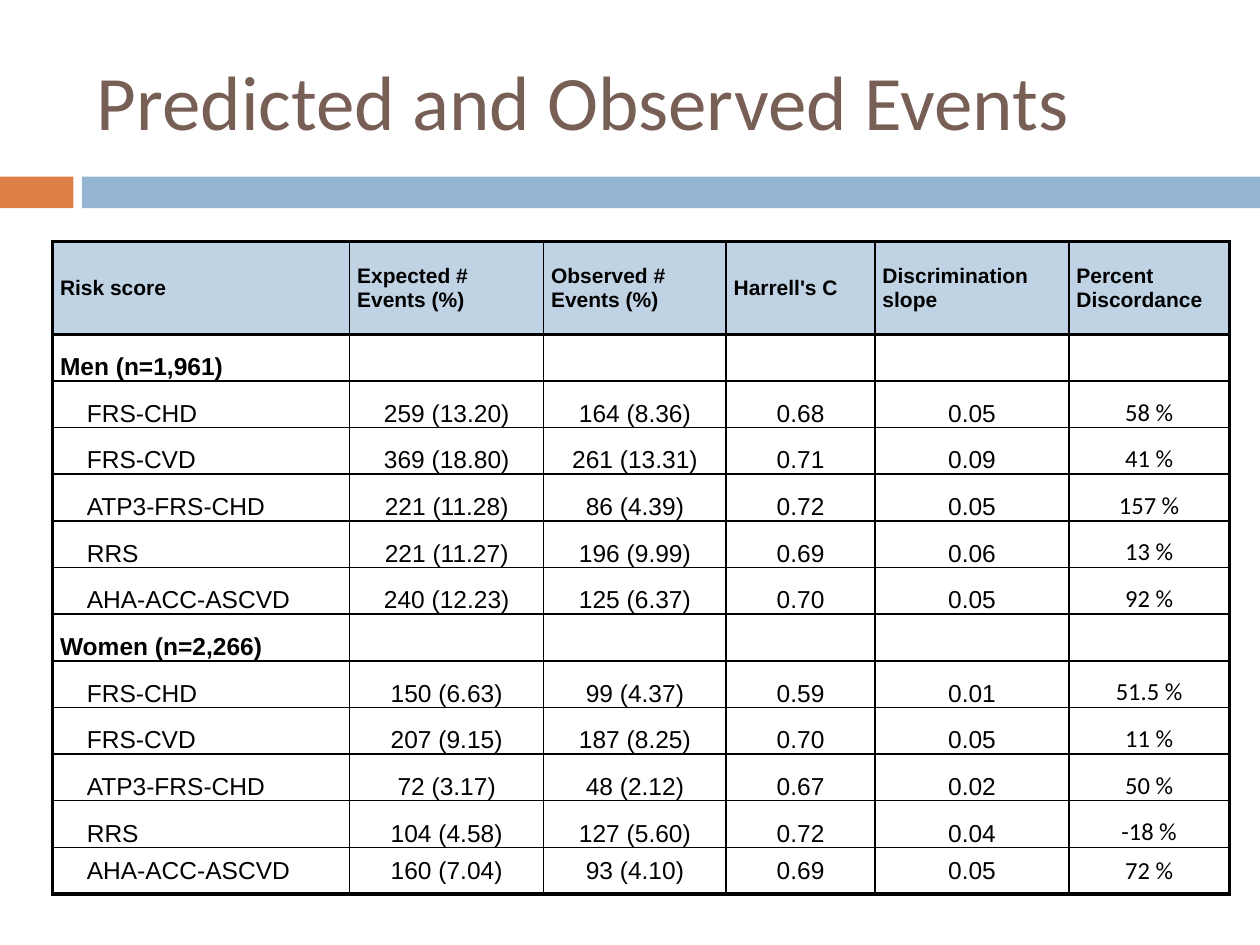
from lxml.etree import SubElement
from pptx import Presentation
from pptx.dml.color import RGBColor
from pptx.enum.shapes import MSO_SHAPE
from pptx.enum.text import MSO_ANCHOR as Anchor, PP_ALIGN as Align
from pptx.oxml.ns import qn
from pptx.util import Cm, Pt

BLACK = RGBColor(0x00, 0x00, 0x00)
BROWN = RGBColor(0x77, 0x5F, 0x55)
ORANGE = RGBColor(0xDD, 0x80, 0x47)
BLUE = RGBColor(0x94, 0xB6, 0xD2)
PALE_BLUE = RGBColor(0xBF, 0xD3, 0xE4)

THIN, THICK = Pt(1), Pt(2.25)
MARGIN, INDENT = Cm(0.15), Cm(0.54)
COL_WIDTHS = [5.99, 3.91, 3.68, 3.0, 3.91, 3.23]
HEADER_HEIGHT, ROW_HEIGHT = Cm(1.87), Cm(0.94)

HEADER = ["Risk score", "Expected # Events (%)", "Observed # Events (%)",
          "Harrell's C", "Discrimination\nslope", "Percent Discordance"]
GROUPS = {
    "Men (n=1,961)": [
        ["FRS-CHD", "259 (13.20)", "164 (8.36)", "0.68", "0.05", "58 %"],
        ["FRS-CVD", "369 (18.80)", "261 (13.31)", "0.71", "0.09", "41 %"],
        ["ATP3-FRS-CHD", "221 (11.28)", "86 (4.39)", "0.72", "0.05", "157 %"],
        ["RRS", "221 (11.27)", "196 (9.99)", "0.69", "0.06", "13 %"],
        ["AHA-ACC-ASCVD", "240 (12.23)", "125 (6.37)", "0.70", "0.05", "92 %"],
    ],
    "Women (n=2,266)": [
        ["FRS-CHD", "150 (6.63)", "99 (4.37)", "0.59", "0.01", "51.5 %"],
        ["FRS-CVD", "207 (9.15)", "187 (8.25)", "0.70", "0.05", "11 %"],
        ["ATP3-FRS-CHD", "72 (3.17)", "48 (2.12)", "0.67", "0.02", "50 %"],
        ["RRS", "104 (4.58)", "127 (5.60)", "0.72", "0.04", "-18 %"],
        ["AHA-ACC-ASCVD", "160 (7.04)", "93 (4.10)", "0.69", "0.05", "72 %"],
    ],
}


def add_band(slide, left, top, width, height):
    """Draw the short orange bar and the long blue bar across the box."""
    short, gap = Cm(1.48), Cm(0.17)
    start = short + gap
    for x, w, color in ((0, short, ORANGE), (start, width - start, BLUE)):
        s = slide.shapes.add_shape(MSO_SHAPE.RECTANGLE, left + x, top, w, height)
        s.shadow.inherit = False
        s.fill.solid()
        s.fill.fore_color.rgb = color
        s.line.fill.background()


def set_title(slide, text, left, top, width, height):
    title = slide.shapes.title
    title.left, title.top, title.width, title.height = left, top, width, height
    tf = title.text_frame
    tf.text = text
    tf.vertical_anchor = Anchor.MIDDLE
    p = tf.paragraphs[0]
    p.alignment = Align.LEFT
    p.font.name, p.font.size = "Calibri", Pt(44)
    p.font.color.rgb = BROWN


def set_borders(cell, **widths):
    """Give the cell black borders; schema order is L, R, T, B."""
    tc_pr = cell._tc.get_or_add_tcPr()
    for side in "LRTB":
        ln = SubElement(tc_pr, qn(f"a:ln{side}"), w=str(int(widths[side])))
        fill = SubElement(ln, qn("a:solidFill"))
        SubElement(fill, qn("a:srgbClr"), val=str(BLACK))


def format_text(cell, text, size, bold, font, align):
    cell.text = text
    for p in cell.text_frame.paragraphs:
        p.alignment = align
        p.font.name, p.font.size, p.font.bold = font, size, bold
        p.font.color.rgb = BLACK


def add_score_table(slide, left, top):
    rows = [HEADER]
    for group, scores in GROUPS.items():
        rows += [[group] + [""] * (len(HEADER) - 1), *scores]
    last_row, last_col = len(rows) - 1, len(HEADER) - 1

    table = slide.shapes.add_table(
        len(rows), len(HEADER), left, top, Cm(sum(COL_WIDTHS)),
        HEADER_HEIGHT + last_row * ROW_HEIGHT).table
    table.first_row = table.horz_banding = False
    for column, width in zip(table.columns, COL_WIDTHS):
        column.width = Cm(width)

    for r, values in enumerate(rows):
        is_header, is_group = r == 0, values[0] in GROUPS
        is_score = not (is_header or is_group)
        table.rows[r].height = HEADER_HEIGHT if is_header else ROW_HEIGHT
        for c, text in enumerate(values):
            cell = table.cell(r, c)
            cell.margin_top = cell.margin_bottom = 0
            cell.margin_left = cell.margin_right = MARGIN
            if is_score and c == 0:
                cell.margin_left = MARGIN + INDENT
            cell.vertical_anchor = (
                Anchor.MIDDLE if r in (0, last_row) else Anchor.BOTTOM)
            format_text(
                cell, text,
                size=Pt(12) if is_header else Pt(14),
                bold=not is_score,
                font="Calibri" if is_score and c == last_col else "Arial",
                align=Align.CENTER if is_score and c else Align.LEFT)
            set_borders(
                cell,
                L=THICK if c == 0 else THIN,
                R=THICK if c == last_col else THIN,
                T=THICK if r <= 1 else THIN,
                B=THICK if r in (0, last_row) else THIN)
            if is_header:
                cell.fill.solid()
                cell.fill.fore_color.rgb = PALE_BLUE
            else:
                cell.fill.background()


def main():
    prs = Presentation()
    prs.slide_width, prs.slide_height = Cm(25.4), Cm(19.05)
    slide = prs.slides.add_slide(prs.slide_layouts[5])
    add_band(slide, 0, Cm(3.56), prs.slide_width, Cm(0.64))
    set_title(slide, "Predicted and Observed Events",
              Cm(1.7), Cm(0.64), Cm(22.66), Cm(2.74))
    add_score_table(slide, Cm(1.06), Cm(4.87))
    prs.save("out.pptx")


if __name__ == "__main__":
    main()
